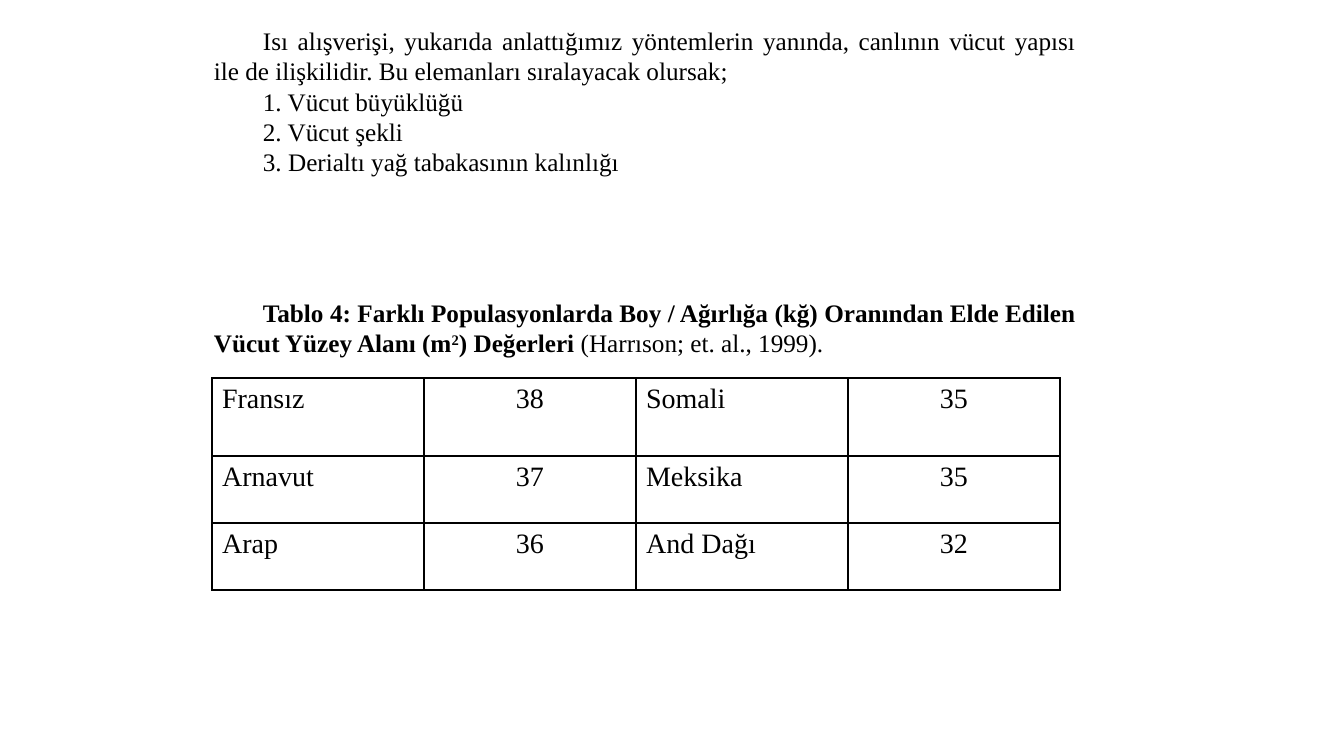
from lxml import etree
from pptx import Presentation, util as u
from pptx.dml.color import RGBColor
from pptx.enum import text
from pptx.oxml import ns

PX = 914400 / 100.8
BLACK = RGBColor(0, 0, 0)
FONT = "Times New Roman"


def px(length):
    return u.Emu(round(length * PX))


def add_span(para, words, size, bold=False):
    span = para.add_run()
    span.text = words
    span.font.name = FONT
    span.font.size = u.Pt(size)
    span.font.bold = bold
    span.font.color.rgb = BLACK
    return span


deck = Presentation()
deck.slide_width, deck.slide_height = px(1344), px(756)
page = deck.slides.add_slide(deck.slide_layouts[6])

# Introduction, numbered factors and table caption
box = page.shapes.add_textbox(px(204), px(-10), px(882), px(373))
frame = box.text_frame
frame.word_wrap = True
frame.vertical_anchor = text.MSO_ANCHOR.BOTTOM

intro = [
    "Isı alışverişi, yukarıda anlattığımız yöntemlerin yanında, canlının vücut yapısı "
    "ile de ilişkilidir. Bu elemanları sıralayacak olursak;",
    "1. Vücut büyüklüğü",
    "2. Vücut şekli",
    "3. Derialtı yağ tabakasının kalınlığı",
]
for index, words in enumerate(intro):
    para = frame.paragraphs[0] if index == 0 else frame.add_paragraph()
    add_span(para, words, 18)

caption = frame.add_paragraph()
caption.space_before = px(121)
add_span(caption, "Tablo 4: Farklı Populasyonlarda Boy / Ağırlığa (kğ) Oranından "
                  "Elde Edilen Vücut Yüzey Alanı (m", 18, True)
square = add_span(caption, "2", 18, True)
square.font._element.set("baseline", "30000")
add_span(caption, ") Değerleri ", 18, True)
add_span(caption, "(Harrıson; et. al., 1999).", 18)

for para in frame.paragraphs:
    para.alignment = text.PP_ALIGN.JUSTIFY
    para.line_spacing = u.Pt(21.6)
    para._p.get_or_add_pPr().set("indent", str(px(49)))

# Body surface values
values = [
    ("Fransız", "38", "Somali", "35"),
    ("Arnavut", "37", "Meksika", "35"),
    ("Arap", "36", "And Dağı", "32"),
]
row_heights = [78, 67, 67]
table = page.shapes.add_table(3, 4, px(212), px(378), px(848), px(sum(row_heights))).table
table.first_row = table.horz_banding = False
for column in table.columns:
    column.width = px(212)

for row, height, entries in zip(table.rows, row_heights, values):
    row.height = px(height)
    for cell, entry in zip(row.cells, entries):
        para = cell.text_frame.paragraphs[0]
        para.alignment = text.PP_ALIGN.CENTER if entry.isdigit() else text.PP_ALIGN.JUSTIFY
        add_span(para, entry, 20)
        properties = cell._tc.get_or_add_tcPr()
        for side in ("a:lnL", "a:lnR", "a:lnT", "a:lnB"):
            border = etree.SubElement(properties, ns.qn(side), w=str(u.Pt(1)))
            fill = etree.SubElement(border, ns.qn("a:solidFill"))
            etree.SubElement(fill, ns.qn("a:srgbClr"), val=str(BLACK))
        cell.fill.background()

deck.save("out.pptx")
